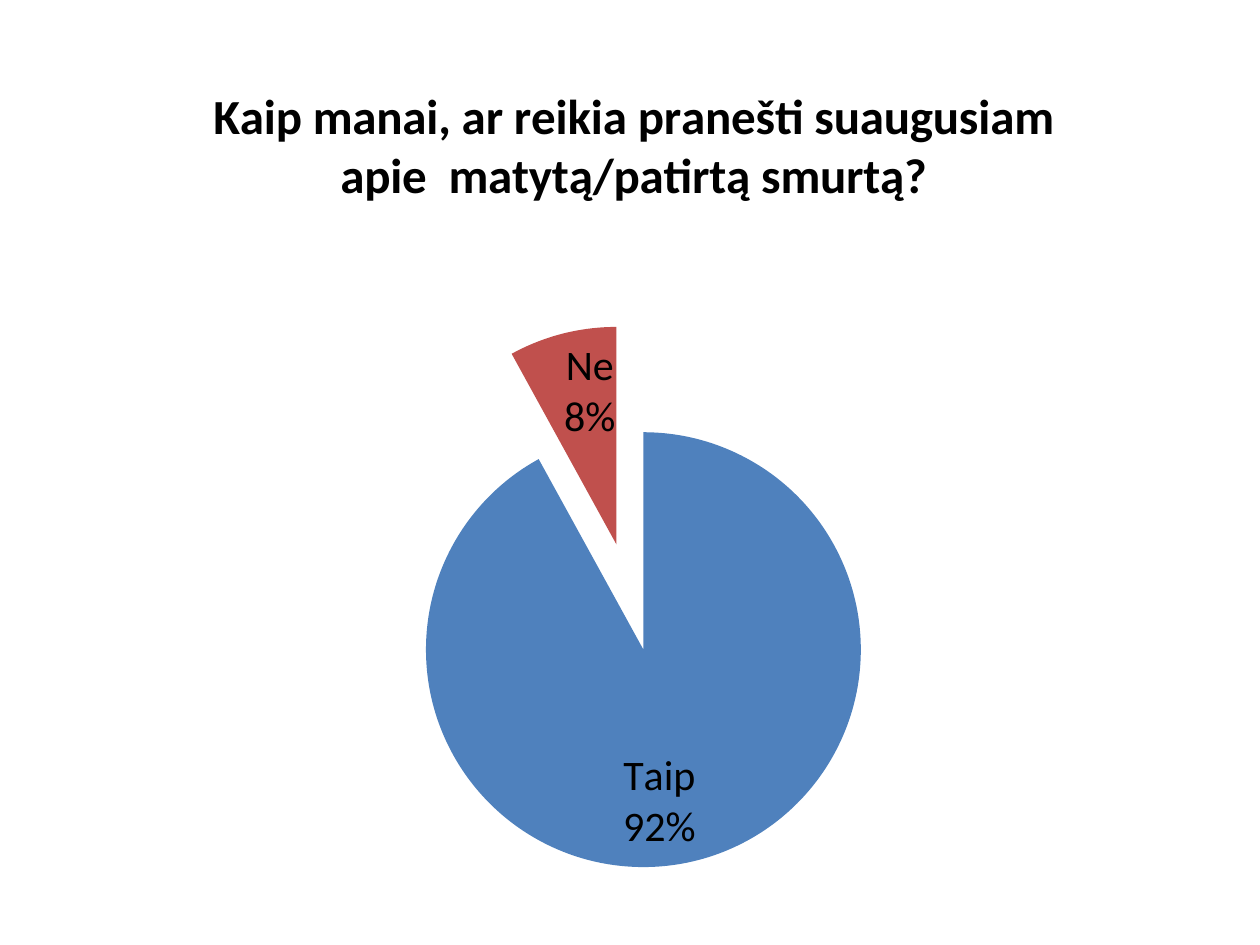
from dataclasses import dataclass

from lxml import etree
from pptx import Presentation
from pptx.chart.data import CategoryChartData
from pptx.dml.color import RGBColor
from pptx.enum.chart import XL_CHART_TYPE as ChartType, XL_LABEL_POSITION as LabelPosition
from pptx.oxml.ns import qn
from pptx.util import Inches, Pt


@dataclass(frozen=True)
class Theme:
    font: str = "Calibri"
    text: str = "000000"
    slices: tuple = ("4F81BD", "C0504D")
    base_size: int = 10
    title_size: int = 28
    label_size: int = 24


class SlideBuilder:
    def __init__(self, page, theme):
        self.page = page
        self.theme = theme

    def style_font(self, font, size, bold=False):
        values = {"name": self.theme.font, "size": Pt(size), "bold": bold}
        for name, value in values.items():
            setattr(font, name, value)
        font.color.rgb = RGBColor.from_string(self.theme.text)

    def place(self, parent, before, values):
        """Give a chart part a manual layout, in fractions of the chart."""
        for old in parent.findall(qn("c:layout")):
            parent.remove(old)
        layout = etree.Element(qn("c:layout"))
        manual = etree.SubElement(layout, qn("c:manualLayout"))
        for name, value in values.items():
            etree.SubElement(manual, qn(f"c:{name}"), val=str(value))
        parent.find(qn(before)).addprevious(layout)

    def pie(self, box, title, answers, explosion):
        data = CategoryChartData()
        data.categories = list(answers)
        data.add_series("Series 1", list(answers.values()))
        frame = self.page.shapes.add_chart(ChartType.PIE, *map(Inches, box), data)
        chart = frame.chart
        chart.has_legend = False
        self.style_font(chart.font, self.theme.base_size)
        self.title(chart, title)
        plot = chart.plots[0]
        plot.vary_by_categories = True
        self.slices(plot.series[0], explosion)
        self.labels(plot)
        area = chart._chartSpace.chart.plotArea
        self.place(area, "c:pieChart", {
            "layoutTarget": "inner", "xMode": "edge", "yMode": "edge",
            "x": 0.27, "y": 0.33, "w": 0.46, "h": 0.65,
        })

    def title(self, chart, text):
        chart.has_title = True
        chart.chart_title.include_in_layout = False
        para = chart.chart_title.text_frame.paragraphs[0]
        span = para.add_run()
        span.text = text
        self.style_font(span.font, self.theme.title_size, bold=True)
        self.place(chart.chart_title._element, "c:overlay", {
            "xMode": "edge", "yMode": "edge", "x": 0.14, "y": 0.03,
        })

    def slices(self, series, explosion):
        """Colour each slice and pull all of them out by a percentage."""
        for index, color in enumerate(self.theme.slices):
            fill = series.points[index].format.fill
            fill.solid()
            fill.fore_color.rgb = RGBColor.from_string(color)
        element = etree.Element(qn("c:explosion"), val=str(explosion))
        series._element.find(qn("c:dPt")).addprevious(element)

    def labels(self, plot):
        plot.has_data_labels = True
        labels = plot.data_labels
        values = {
            "show_category_name": True,
            "show_percentage": True,
            "show_value": False,
            "position": LabelPosition.INSIDE_END,
        }
        for name, value in values.items():
            setattr(labels, name, value)
        self.style_font(labels.font, self.theme.label_size)


def main():
    deck = Presentation()
    deck.slide_width, deck.slide_height = Inches(10), Inches(7.5)
    page = deck.slides.add_slide(deck.slide_layouts[6])
    SlideBuilder(page, Theme()).pie(
        box=(0.31, 0.39, 9.38, 6.64),
        title="Kaip manai, ar reikia pranešti suaugusiam apie  matytą/patirtą smurtą?",
        answers={"Taip": 92, "Ne": 8},
        explosion=25,
    )
    deck.save("out.pptx")


if __name__ == "__main__":
    main()
